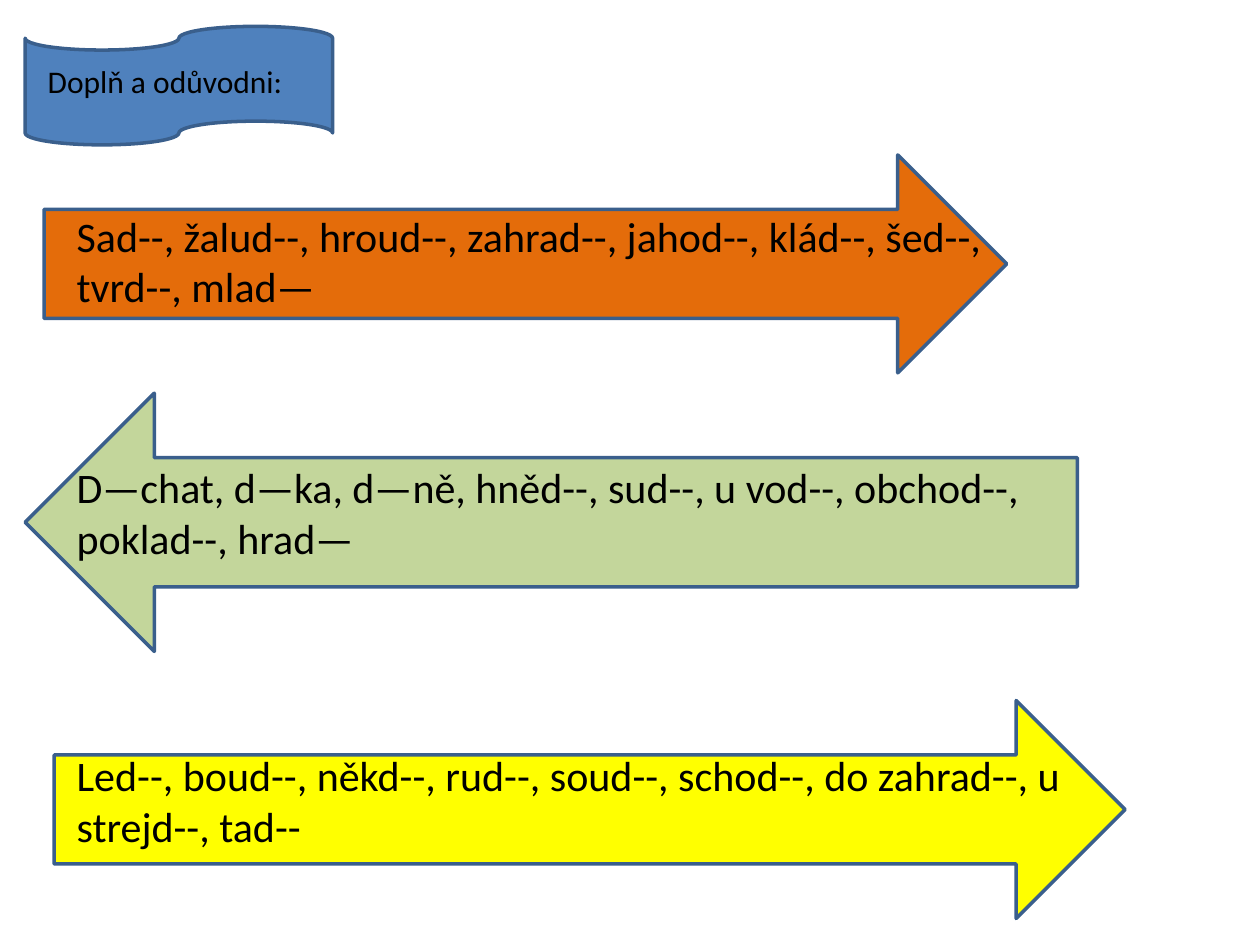
from pptx import Presentation
from pptx import util as u
from pptx.dml.color import RGBColor
from pptx.enum import shapes, text

WIDTH, HEIGHT = 10, 7.5
FONT = "Calibri"
COLORS = {
    "tape": "4F81BD",
    "orange": "E46C0A",
    "green": "C3D69B",
    "yellow": "FFFF00",
    "outline": "3A5F8C",
    "text": "000000",
}
SHAPE = shapes.MSO_SHAPE

# kind, fill, box (left, top, width, height in inches)
ARROWS = [
    (SHAPE.LEFT_ARROW, "green", (0.2, 3.12, 8.35, 2.05)),
    (SHAPE.RIGHT_ARROW, "yellow", (0.43, 5.56, 8.5, 1.73)),
    (SHAPE.RIGHT_ARROW, "orange", (0.35, 1.23, 7.64, 1.73)),
]
# words, space before in points
EXERCISES = [
    ("Sad--, žalud--, hroud--, zahrad--, jahod--, klád--, šed--, tvrd--, mlad—", 0),
    ("D—chat, d—ka, d—ně, hněd--, sud--, u vod--, obchod--, poklad--, hrad—", 86),
    ("Led--, boud--, někd--, rud--, soud--, schod--, do zahrad--, u strejd--, tad--", 107),
]


def rgb(name):
    return RGBColor.from_string(COLORS[name])


def inches(box):
    return [u.Inches(v) for v in box]


def add_outlined(slide, kind, fill, box):
    sp = slide.shapes.add_shape(kind, *inches(box))
    sp.shadow.inherit = False
    sp.fill.solid()
    sp.fill.fore_color.rgb = rgb(fill)
    sp.line.color.rgb = rgb("outline")
    sp.line.width = u.Pt(2)


def add_text(slide, box, paragraphs, size):
    """Write (wording, space before) pairs into one wrapping text box."""
    tf = slide.shapes.add_textbox(*inches(box)).text_frame
    tf.word_wrap = True
    tf.auto_size = text.MSO_AUTO_SIZE.SHAPE_TO_FIT_TEXT
    for i, (wording, gap) in enumerate(paragraphs):
        p = tf.add_paragraph() if i else tf.paragraphs[0]
        p.text = wording
        p.space_before = u.Pt(gap)
        font = p.runs[0].font
        font.name, font.size = FONT, u.Pt(size)
        font.color.rgb = rgb("text")


def add_heading(slide, box):
    left, top, width, height = box
    add_outlined(slide, SHAPE.FLOWCHART_PUNCHED_TAPE, "tape", box)
    label = (left + 0.08, top + height / 4, 5.59, 0.4)
    add_text(slide, label, [("Doplň a odůvodni:", 0)], 18)


def add_exercises(slide, box):
    """Draw the arrows, then the word lists that run across them."""
    for kind, fill, arrow_box in ARROWS:
        add_outlined(slide, kind, fill, arrow_box)
    add_text(slide, box, EXERCISES, 24)


def main():
    prs = Presentation()
    prs.slide_width, prs.slide_height = u.Inches(WIDTH), u.Inches(HEIGHT)
    slide = prs.slides.add_slide(prs.slide_layouts[6])
    add_exercises(slide, (0.51, 1.62, 8.11, 5.25))
    add_heading(slide, (0.2, 0.21, 2.44, 0.94))
    prs.save("out.pptx")


if __name__ == "__main__":
    main()
